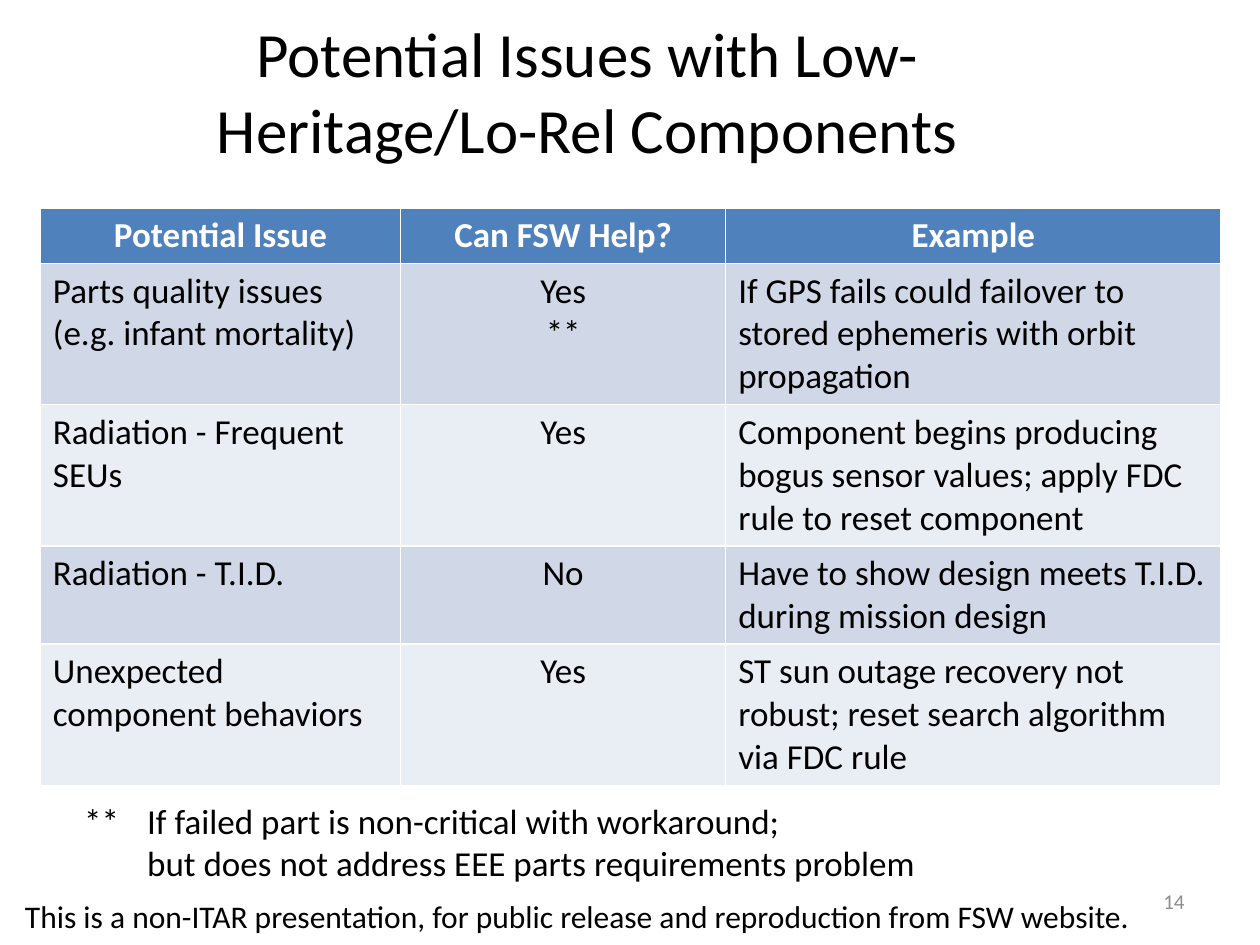
from dataclasses import dataclass

from lxml import etree
from pptx import Presentation
from pptx.dml.color import RGBColor
from pptx.enum import text
from pptx.oxml import ns
from pptx.util import Inches, Pt

FONT = "Calibri"
COLORS = {
    "text": "000000",
    "number": "8C8C8C",
    "header": "4F81BD",
    "header_text": "FFFFFF",
    "band_dark": "D0D8E8",
    "band_light": "E9EDF4",
}
LEFT, CENTER, RIGHT = text.PP_ALIGN.LEFT, text.PP_ALIGN.CENTER, text.PP_ALIGN.RIGHT
TOP, MIDDLE = text.MSO_ANCHOR.TOP, text.MSO_ANCHOR.MIDDLE


@dataclass
class Label:
    content: str
    left: float
    top: float
    width: float
    height: float
    size: int
    align: text.PP_ALIGN = LEFT
    anchor: text.MSO_ANCHOR = TOP
    color: str = "text"
    tab: float = 0


@dataclass
class Issue:
    name: str
    fsw_help: str
    example: str


LABELS = [
    Label("This is a non-ITAR presentation, for public release and reproduction from FSW website.",
          0.1, 7.07, 9.5, 0.4, 18),
    Label("Potential Issues with Low-Heritage/Lo-Rel Components",
          1.58, 0.18, 6.16, 1.07, 36, CENTER, MIDDLE),
    Label("14", 7.17, 6.95, 2.33, 0.4, 12, RIGHT, MIDDLE, "number"),
    Label("**\tIf failed part is non-critical with workaround;\v"
          "\tbut does not address EEE parts requirements problem",
          0.57, 6.3, 8.8, 0.77, 20, tab=0.5),
]

HEADER = Issue("Potential Issue", "Can FSW Help?", "Example")
ISSUES = [
    Issue("Parts quality issues\n(e.g. infant mortality)", "Yes\n**",
          "If GPS fails could failover to stored ephemeris with orbit propagation"),
    Issue("Radiation - Frequent SEUs", "Yes",
          "Component begins producing bogus sensor values; apply FDC rule to reset component"),
    Issue("Radiation - T.I.D.", "No",
          "Have to show design meets T.I.D. during mission design"),
    Issue("Unexpected component behaviors", "Yes",
          "ST sun outage recovery not robust; reset search algorithm via FDC rule"),
]
COLUMN_WIDTHS = [2.86, 2.58, 3.93]
ROW_HEIGHT = 0.41


def rgb(name: str) -> RGBColor:
    return RGBColor.from_string(COLORS[name])


def set_text(tf, content: str, size: int, align, color: str, bold: bool = False) -> None:
    tf.text = content
    for p in tf.paragraphs:
        p.alignment = align
        for r in p.runs:
            r.font.name = FONT
            r.font.size = Pt(size)
            r.font.bold = bold
            r.font.color.rgb = rgb(color)


def add_tab_stop(p, position: float) -> None:
    tabs = etree.SubElement(p._p.get_or_add_pPr(), ns.qn("a:tabLst"))
    etree.SubElement(tabs, ns.qn("a:tab"), pos=str(Inches(position)), algn="l")


def draw_label(s, label: Label) -> None:
    sp = s.shapes.add_textbox(Inches(label.left), Inches(label.top),
                              Inches(label.width), Inches(label.height))
    tf = sp.text_frame
    tf.word_wrap = True
    tf.vertical_anchor = label.anchor
    set_text(tf, label.content, label.size, label.align, label.color)
    if label.tab:
        add_tab_stop(tf.paragraphs[0], label.tab)


def draw_issue(table, row: int, issue: Issue) -> None:
    is_header = row == 0
    fill = "header" if is_header else "band_dark" if row % 2 else "band_light"
    color = "header_text" if is_header else "text"
    table.rows[row].height = Inches(ROW_HEIGHT)
    for col, content in enumerate((issue.name, issue.fsw_help, issue.example)):
        cell = table.cell(row, col)
        cell.fill.solid()
        cell.fill.fore_color.rgb = rgb(fill)
        align = CENTER if is_header or col == 1 else LEFT
        set_text(cell.text_frame, content, 20, align, color, is_header)


def draw_table(s) -> None:
    rows = [HEADER, *ISSUES]
    table = s.shapes.add_table(len(rows), len(COLUMN_WIDTHS), Inches(0.32), Inches(1.65),
                               Inches(sum(COLUMN_WIDTHS)), Inches(ROW_HEIGHT * len(rows))).table
    for column, width in zip(table.columns, COLUMN_WIDTHS):
        column.width = Inches(width)
    for row, issue in enumerate(rows):
        draw_issue(table, row, issue)


def main() -> None:
    prs = Presentation()
    prs.slide_width, prs.slide_height = Inches(10), Inches(7.5)
    s = prs.slides.add_slide(prs.slide_layouts[6])
    draw_table(s)
    for label in LABELS:
        draw_label(s, label)
    prs.save("out.pptx")


if __name__ == "__main__":
    main()
